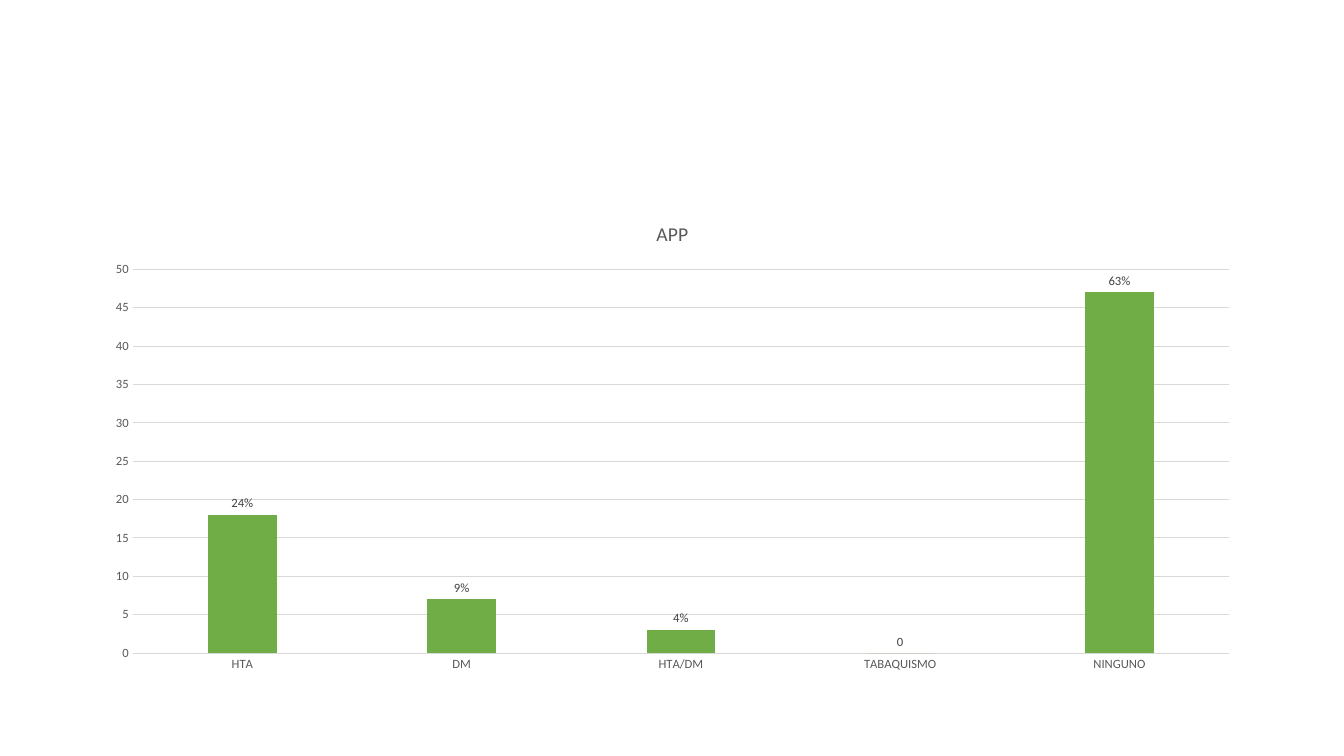
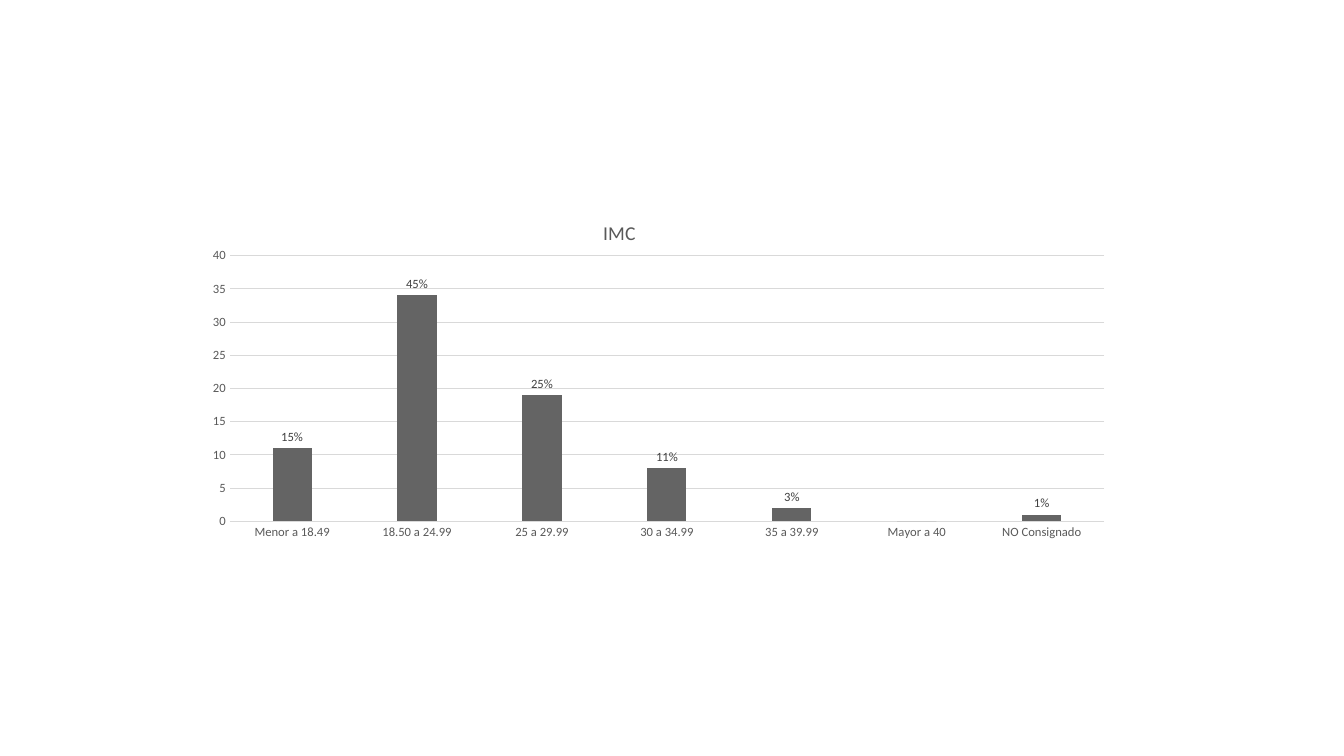
from dataclasses import dataclass
from typing import Optional

from pptx import Presentation
from pptx.chart.chart import Chart
from pptx.chart.data import CategoryChartData
from pptx.dml.color import RGBColor
from pptx.enum.chart import XL_CHART_TYPE as ChartType
from pptx.enum.chart import XL_LABEL_POSITION as LabelPosition
from pptx.enum.chart import XL_TICK_MARK as TickMark
from pptx.oxml import parse_xml
from pptx.oxml.ns import nsdecls
from pptx.slide import Slide
from pptx.text.text import Font
from pptx.util import Inches, Pt

# Shared style
FONT = "Calibri"
AXIS_TEXT = "595959"
LABEL_TEXT = "404040"
GRID = "D9D9D9"
BLANK_LAYOUT = 6
CHART_LEFT, CHART_TOP = 0.92, 2


@dataclass(frozen=True)
class Bar:
    category: str
    value: int
    label: Optional[str] = None


@dataclass(frozen=True)
class BarChart:
    title: str
    width: float
    height: float
    color: str
    axis_maximum: int
    bars: tuple[Bar, ...]
    show_values: bool = False
    plot_box: Optional[tuple[float, float, float, float]] = None


CHARTS = (
    BarChart("APP", 11.5, 4.76, "70AD47", 50, (
        Bar("HTA", 18, "24%"),
        Bar("DM", 7, "9%"),
        Bar("HTA/DM", 3, "4%"),
        Bar("TABAQUISMO", 0),
        Bar("NINGUNO", 47, "63%"),
    ), show_values=True),
    BarChart("IMC", 10.45, 4.47, "646464", 40, (
        Bar("Menor a 18.49", 11, "15%"),
        Bar("18.50 a 24.99", 34, "45%"),
        Bar("25 a 29.99", 19, "25%"),
        Bar("30 a 34.99", 8, "11%"),
        Bar("35 a 39.99", 2, "3%"),
        Bar("Mayor a 40", 0),
        Bar("NO Consignado", 1, "1%"),
    ), plot_box=(0.13, 0.12, 0.83, 0.59)),
)


def rgb(color: str) -> RGBColor:
    return RGBColor.from_string(color)


def style_font(font: Font, size: float, color: str) -> None:
    font.name = FONT
    font.size = Pt(size)
    font.bold = False
    font.color.rgb = rgb(color)


def style_axes(chart: Chart, maximum: int) -> None:
    category_axis, value_axis = chart.category_axis, chart.value_axis
    for axis in (category_axis, value_axis):
        axis.major_tick_mark = axis.minor_tick_mark = TickMark.NONE
        style_font(axis.tick_labels.font, 9, AXIS_TEXT)
    value_axis.minimum_scale = 0
    value_axis.maximum_scale = maximum
    value_axis.major_unit = 5
    value_axis.has_major_gridlines = True
    value_axis.format.line.fill.background()
    for line in (category_axis.format.line, value_axis.major_gridlines.format.line):
        line.color.rgb = rgb(GRID)
        line.width = Pt(0.75)


def style_bars(chart: Chart, content: BarChart) -> None:
    plot = chart.plots[0]
    plot.gap_width = 219
    plot.overlap = -27
    plot.vary_by_categories = False
    series = plot.series[0]
    series.format.fill.solid()
    series.format.fill.fore_color.rgb = rgb(content.color)

    # Counts by default, percentages where a bar has its own label
    labels = series.data_labels
    labels.show_value = content.show_values
    labels.position = LabelPosition.OUTSIDE_END
    style_font(labels.font, 9, LABEL_TEXT)
    for index, bar in enumerate(content.bars):
        if bar.label:
            label = series.points[index].data_label
            label.text_frame.text = bar.label
            label.position = LabelPosition.OUTSIDE_END
            style_font(label.text_frame.paragraphs[0].runs[0].font, 9, LABEL_TEXT)


def place_plot(chart: Chart, box: tuple[float, float, float, float]) -> None:
    """Fix the inner plot area, in fractions of the chart."""
    plot_area = chart.element.xpath("c:chart/c:plotArea")[0]
    for layout in plot_area.xpath("c:layout"):
        plot_area.remove(layout)
    modes = "".join(f'<c:{side}Mode val="edge"/>' for side in "xy")
    sizes = "".join(f'<c:{key} val="{value}"/>' for key, value in zip("xywh", box))
    plot_area.insert(0, parse_xml(
        f'<c:layout {nsdecls("c")}><c:manualLayout><c:layoutTarget val="inner"/>'
        f"{modes}{sizes}</c:manualLayout></c:layout>"
    ))


def add_bar_chart(slide: Slide, content: BarChart) -> None:
    data = CategoryChartData()
    data.categories = [bar.category for bar in content.bars]
    data.add_series("Series 1", [bar.value for bar in content.bars])
    chart = slide.shapes.add_chart(
        ChartType.COLUMN_CLUSTERED, Inches(CHART_LEFT), Inches(CHART_TOP),
        Inches(content.width), Inches(content.height), data,
    ).chart
    style_font(chart.font, 10, "000000")
    chart.has_legend = False
    chart.has_title = True
    title = chart.chart_title.text_frame
    title.text = content.title
    style_font(title.paragraphs[0].runs[0].font, 14, AXIS_TEXT)
    style_axes(chart, content.axis_maximum)
    style_bars(chart, content)
    if content.plot_box:
        place_plot(chart, content.plot_box)


def main() -> None:
    presentation = Presentation()
    presentation.slide_width = Inches(13.33)
    presentation.slide_height = Inches(7.5)
    for content in CHARTS:
        slide = presentation.slides.add_slide(presentation.slide_layouts[BLANK_LAYOUT])
        add_bar_chart(slide, content)
    presentation.save("out.pptx")


if __name__ == "__main__":
    main()
